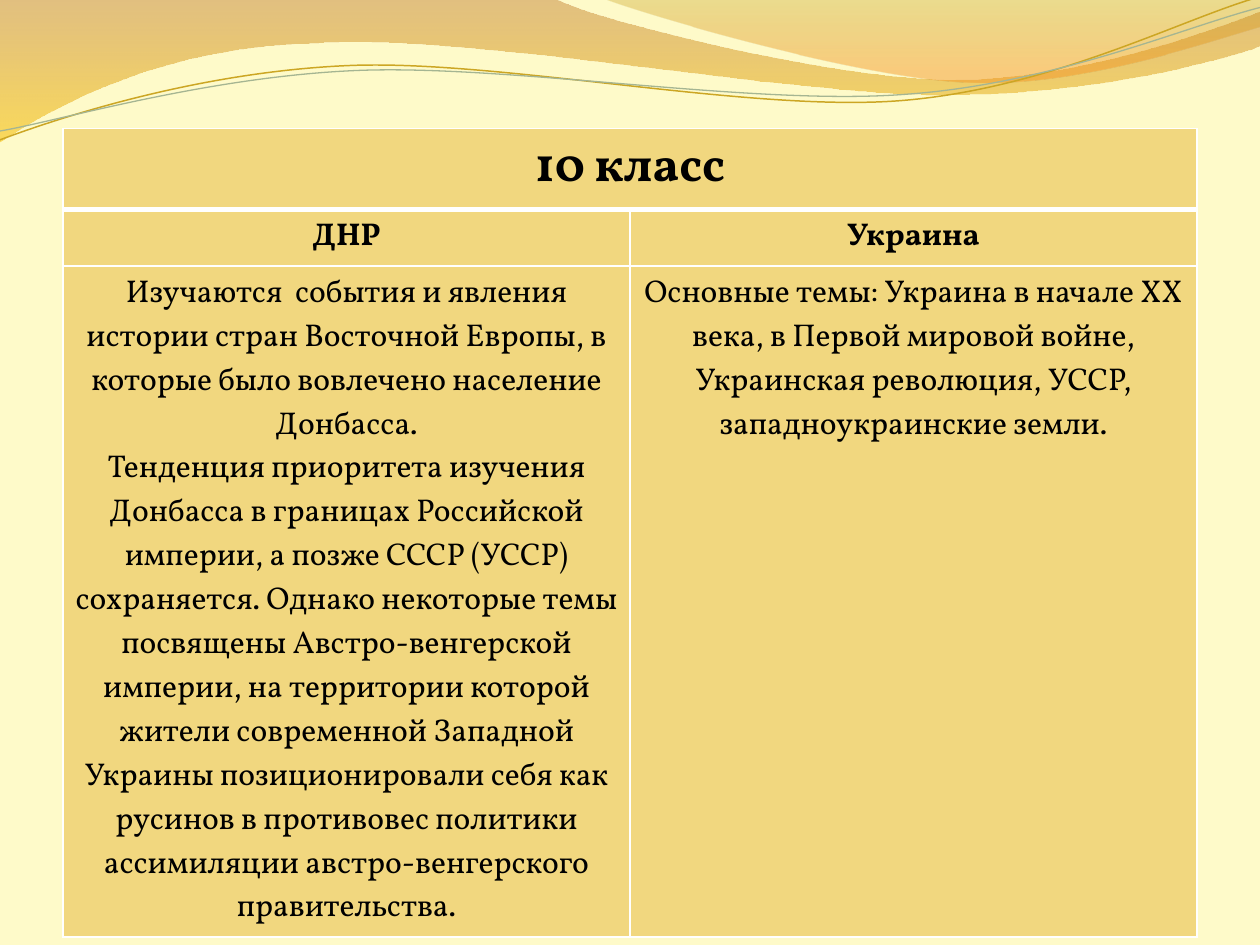
import math
import pptx
import pptx.util
import pptx.oxml
import pptx.oxml.ns
import pptx.dml.color
import pptx.enum.text
from dataclasses import dataclass

Inches = pptx.util.Inches
Pt = pptx.util.Pt
qn = pptx.oxml.ns.qn
SPACE = pptx.oxml.ns.nsdecls("a")


@dataclass(frozen=True)
class Theme:
    font: str = "Vollkorn"
    back: str = "FEFAC9"
    cell: str = "F1D77F"
    edge: str = "FFFFFF"
    ink: str = "000000"
    gold: str = "CCA624"
    sage: str = "A5B592"
    head: int = 28
    body: int = 18


THEME = Theme()
TILT = -2.7

# Waves: a start point, then lines (2 numbers) and curves (6 numbers), in inches
BROAD = [(0, 0), (4.4, -0.01), (4.76, 0.17, 6.64, 0.63, 7.58, 0.63),
         (8.53, 0.63, 9.58, 0.26, 10, 0.09), (10.01, 0.36),
         (9.83, 0.44, 8.7, 0.76, 7.46, 0.75),
         (6.22, 0.75, 3.82, 0.28, 2.57, 0.34),
         (1.29, 0.36, 0.46, 0.83, -0.01, 1.13), (0, 0)]
SMALL = [(4.79, -0.01), (5.09, 0.11, 6.82, 0.62, 7.69, 0.65),
         (8.56, 0.69, 9.61, 0.32, 10, 0.21), (10, 0), (4.79, -0.01)]
UPPER = [(0, 1.11), (0.48, 0.93, 1.58, 0.57, 2.77, 0.52),
         (3.95, 0.47, 5.93, 0.89, 7.13, 0.8),
         (8.33, 0.71, 9.38, 0.15, 9.98, -0.02)]
LOWER = [(0, 1.04), (0.47, 0.96, 1.64, 0.61, 2.83, 0.56),
         (4.03, 0.51, 5.97, 0.84, 7.17, 0.75),
         (8.36, 0.67, 9.41, 0.21, 10, 0.06)]

# Table wording: one list of paragraphs per cell
ROWS = [
    [["10 класс"]],
    [["ДНР"], ["Украина"]],
    [["Изучаются  события и явления истории стран Восточной Европы, в",
      "которые было вовлечено население Донбасса.",
      "Тенденция приоритета изучения Донбасса в границах Российской "
      "империи, а позже СССР (УССР) сохраняется. Однако некоторые темы "
      "посвящены Австро-венгерской империи, на территории которой жители "
      "современной Западной Украины позиционировали себя как русинов в "
      "противовес политики ассимиляции австро-венгерского правительства."],
     ["Основные темы: Украина в начале ХХ века, в Первой мировой войне, "
      "Украинская революция, УССР, западноукраинские земли."]],
]


def color(code):
    return pptx.dml.color.RGBColor.from_string(code)


def turn(part, mid, angle):
    """Rotate each point of a path part about mid, clockwise in degrees."""
    cos, sin = math.cos(math.radians(angle)), math.sin(math.radians(angle))
    out = []
    for x, y in zip(part[::2], part[1::2]):
        dx, dy = x - mid[0], y - mid[1]
        out += [mid[0] + dx * cos - dy * sin, mid[1] + dx * sin + dy * cos]
    return out


def add_wave(slide, path, close):
    pts = [(Inches(x), Inches(y)) for part in path
           for x, y in zip(part[::2], part[1::2])]
    pen = slide.shapes.build_freeform(*pts[0])
    pen.add_line_segments(pts[1:], close=close)
    shape = pen.convert_to_shape()
    shape.shadow.inherit = False
    # Join each three points of a curve into one Bezier segment
    lines = iter(list(shape.element.iter(qn("a:lnTo"))))
    for part in path[1:]:
        line = next(lines)
        if len(part) == 6:
            curve = pptx.oxml.parse_xml(f"<a:cubicBezTo {SPACE}/>")
            line.addprevious(curve)
            for step in (line, next(lines), next(lines)):
                curve.append(step[0])
                step.getparent().remove(step)
    return shape


def add_band(slide, path, stops):
    """Closed wave with a see-through gradient from top to bottom."""
    shape = add_wave(slide, path, True)
    shape.line.fill.background()
    shape.fill.gradient()
    shape.fill.gradient_angle = 270
    for stop, (pos, code, alpha) in zip(shape.fill.gradient_stops, stops):
        stop.position = pos
        stop.color.rgb = color(code)
    tags = list(shape.element.spPr.iter(qn("a:srgbClr")))
    for tag, (pos, code, alpha) in zip(tags, stops):
        tag.append(pptx.oxml.parse_xml(
            f'<a:alpha {SPACE} val="{alpha * 1000}"/>'))


def add_curve(slide, path, mid, code, width):
    """Open wave, drawn level and then tilted about its middle."""
    shape = add_wave(slide, [turn(part, mid, -TILT) for part in path], False)
    shape.rotation = TILT
    shape.fill.background()
    shape.line.color.rgb = color(code)
    shape.line.width = Pt(width)


def set_edges(cell, top, bottom):
    props = cell._tc.get_or_add_tcPr()
    for i, (side, width) in enumerate(
            [("L", 1), ("R", 1), ("T", top), ("B", bottom)]):
        props.insert(i, pptx.oxml.parse_xml(
            f'<a:ln{side} {SPACE} w="{Pt(width)}">'
            f'<a:solidFill><a:srgbClr val="{THEME.edge}"/></a:solidFill>'
            f'</a:ln{side}>'))


def set_text(cell, paras, size, bold):
    cell.text_frame.text = "\n".join(paras)
    for para in cell.text_frame.paragraphs:
        para.alignment = pptx.enum.text.PP_ALIGN.CENTER
        for run in para.runs:
            run.font.name = THEME.font
            run.font.size = Pt(size)
            run.font.bold = bold
            run.font.color.rgb = color(THEME.ink)


def add_grid(slide):
    frame = slide.shapes.add_table(
        len(ROWS), 2, Inches(0.5), Inches(1.02), Inches(9), Inches(5.57))
    table = frame.table
    for r, row in enumerate(ROWS):
        # Rows grow to fit their text
        table.rows[r].height = Inches(0.41)
        for c in range(2):
            cell = table.cell(r, c)
            cell.fill.solid()
            cell.fill.fore_color.rgb = color(THEME.cell)
            set_edges(cell, 3 if r == 1 else 1, 3 if r == 0 else 1)
        for c, paras in enumerate(row):
            size = THEME.head if r == 0 else THEME.body
            set_text(table.cell(r, c), paras, size, r < 2)
    table.cell(0, 0).merge(table.cell(0, 1))
    frame.height = Inches(5.57)


def main():
    deck = pptx.Presentation()
    deck.slide_width, deck.slide_height = Inches(10), Inches(7.5)
    slide = deck.slides.add_slide(deck.slide_layouts[6])
    slide.background.fill.solid()
    slide.background.fill.fore_color.rgb = color(THEME.back)

    # Waves along the top
    add_band(slide, BROAD, [(0, "C07A28", 45), (1, "F7BF00", 55)])
    add_band(slide, SMALL, [(0, "C09709", 30), (0.8, "F59320", 45)])
    add_curve(slide, UPPER, (4.99, 0.57), THEME.gold, 0.85)
    add_curve(slide, LOWER, (5, 0.59), THEME.sage, 0.75)

    # Comparison of the two courses
    add_grid(slide)
    deck.save("out.pptx")


if __name__ == "__main__":
    main()
